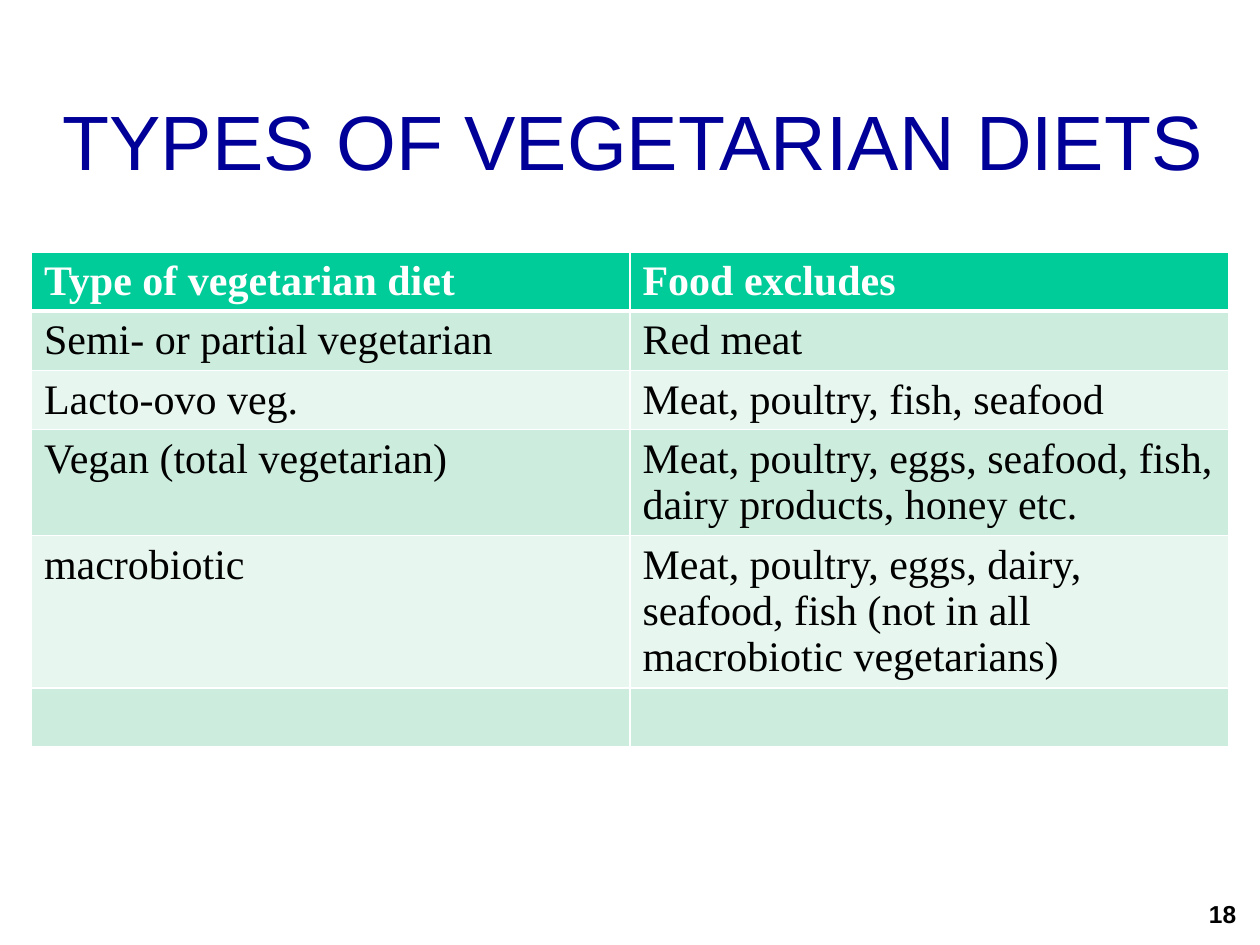
import pptx
import pptx.util
import pptx.dml.color
import pptx.enum.text
import pptx.oxml
import pptx.oxml.ns

Inches = pptx.util.Inches
Pt = pptx.util.Pt
RGBColor = pptx.dml.color.RGBColor
PP_ALIGN = pptx.enum.text.PP_ALIGN
MSO_ANCHOR = pptx.enum.text.MSO_ANCHOR

TITLE = "TYPES OF VEGETARIAN DIETS"
PAGE_NUMBER = "18"
DIETS = [
    ("Type of vegetarian diet", "Food excludes"),
    ("Semi- or partial vegetarian", "Red meat"),
    ("Lacto-ovo veg.", "Meat, poultry, fish, seafood"),
    ("Vegan (total vegetarian)",
     "Meat, poultry, eggs, seafood, fish, dairy products, honey etc."),
    ("macrobiotic",
     "Meat, poultry, eggs, dairy, seafood, fish (not in all macrobiotic vegetarians)"),
    ("", ""),
]
LINES_PER_ROW = [1, 1, 1, 2, 3, 1]
LINE_HEIGHT = 0.37
CELL_PADDING = 0.1

NAVY = RGBColor(0x00, 0x00, 0x99)
BLACK = RGBColor(0x00, 0x00, 0x00)
WHITE = RGBColor(0xFF, 0xFF, 0xFF)
GREEN = RGBColor(0x00, 0xCC, 0x99)
BANDS = [RGBColor(0xE7, 0xF6, 0xEF), RGBColor(0xCC, 0xEC, 0xDE)]


def style_text(tf, font, size, color, bold=False, align=PP_ALIGN.LEFT):
    for p in tf.paragraphs:
        p.alignment = align
        for r in p.runs:
            r.font.name = font
            r.font.size = Pt(size)
            r.font.bold = bold
            r.font.color.rgb = color


def set_borders(cell, widths):
    tc_pr = cell._tc.get_or_add_tcPr()
    for i, (side, width) in enumerate(widths.items()):
        ln = pptx.oxml.parse_xml(
            f'<a:ln{side} {pptx.oxml.ns.nsdecls("a")} w="{Pt(width)}">'
            f'<a:solidFill><a:srgbClr val="{WHITE}"/></a:solidFill></a:ln{side}>')
        tc_pr.insert(i, ln)


def add_title(slide):
    sp = slide.shapes.title
    sp.left, sp.top, sp.width, sp.height = map(Inches, (0.28, 0.36, 9.5, 1.5))
    tf = sp.text_frame
    tf.text = TITLE
    tf.vertical_anchor = MSO_ANCHOR.MIDDLE
    style_text(tf, "Arial", 44, NAVY, align=PP_ALIGN.CENTER)


def add_diet_table(slide):
    heights = [n * LINE_HEIGHT + CELL_PADDING for n in LINES_PER_ROW]
    table = slide.shapes.add_table(
        len(DIETS), 2, Inches(0.25), Inches(2), Inches(9.5), Inches(sum(heights))).table
    for i, (diet, height) in enumerate(zip(DIETS, heights)):
        table.rows[i].height = Inches(height)
        header = i == 0
        for j, text in enumerate(diet):
            cell = table.cell(i, j)
            cell.text = text
            cell.fill.solid()
            cell.fill.fore_color.rgb = GREEN if header else BANDS[i % 2]
            style_text(cell.text_frame, "Times New Roman", 24,
                       WHITE if header else BLACK, bold=header)
            set_borders(cell, {"L": 1, "R": 1, "T": 3 if i == 1 else 1,
                               "B": 3 if header else 1})


def add_page_number(slide):
    sp = slide.shapes.add_textbox(Inches(7.83), Inches(7), Inches(2.08), Inches(0.5))
    tf = sp.text_frame
    tf.word_wrap = True
    tf.vertical_anchor = MSO_ANCHOR.MIDDLE
    tf.text = PAGE_NUMBER
    style_text(tf, "Arial", 14, BLACK, bold=True, align=PP_ALIGN.RIGHT)


def main():
    prs = pptx.Presentation()
    prs.slide_width, prs.slide_height = Inches(10), Inches(7.5)
    slide = prs.slides.add_slide(prs.slide_layouts[5])
    add_title(slide)
    add_diet_table(slide)
    add_page_number(slide)
    prs.save("out.pptx")


if __name__ == "__main__":
    main()
